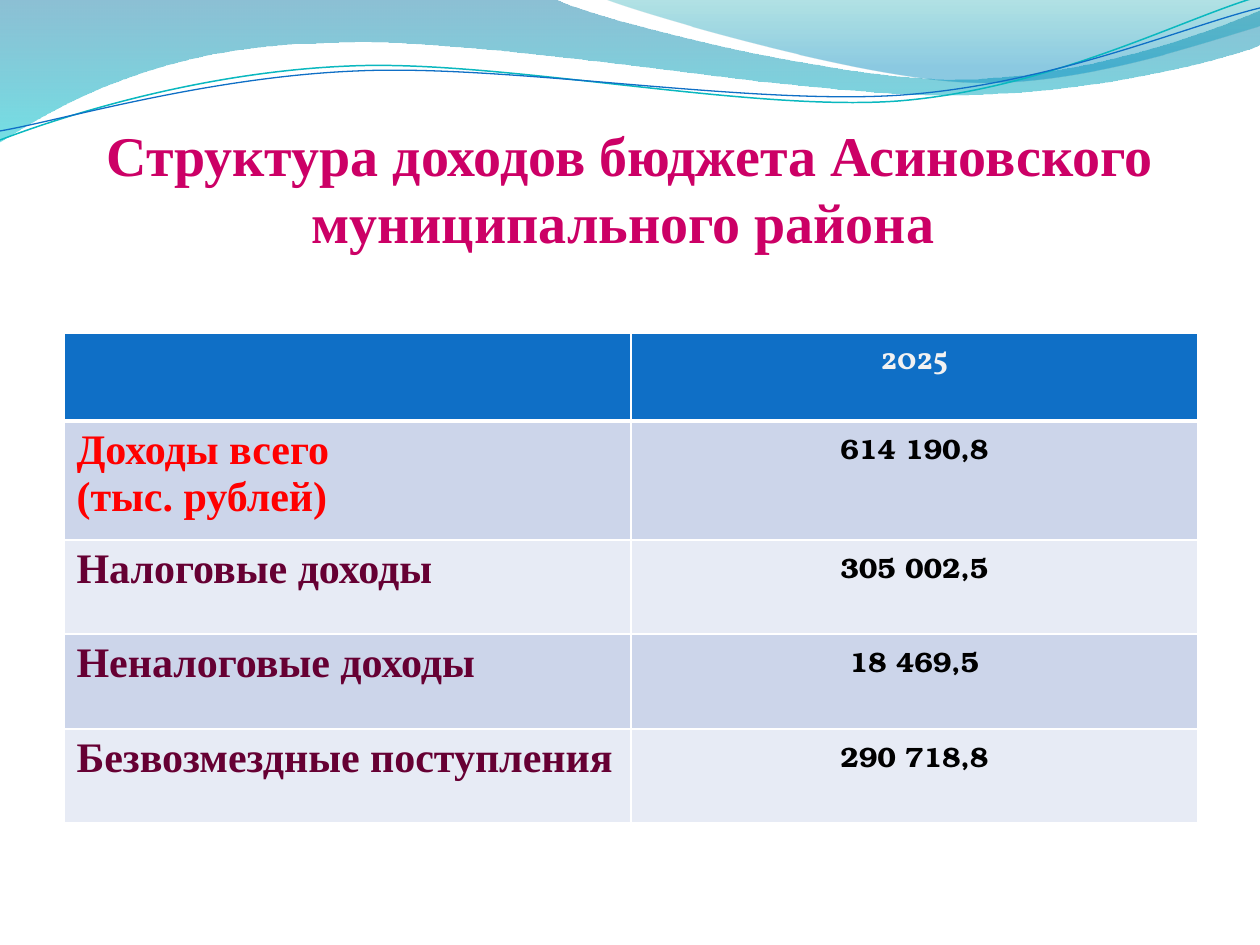
from dataclasses import dataclass
from typing import NamedTuple

from lxml import etree
from pptx import Presentation
from pptx.dml.color import RGBColor
from pptx.enum.text import MSO_ANCHOR, MSO_AUTO_SIZE, PP_ALIGN
from pptx.oxml.ns import qn
from pptx.util import Pt

CENTER, LEFT = PP_ALIGN.CENTER, PP_ALIGN.LEFT
BOTTOM = MSO_ANCHOR.BOTTOM
NO_AUTOFIT = MSO_AUTO_SIZE.NONE
EMU_PER_PX = 914400 / 126

Point = tuple[int, int]


@dataclass(frozen=True)
class Theme:
    serif: str = "Times New Roman"
    year_font: str = "Vollkorn"
    value_font: str = "TeX Gyre Bonum"
    title: str = "CC0066"
    header: str = "0F6FC6"
    year: str = "F2F2F2"
    total: str = "FF0000"
    label: str = "660033"
    value: str = "000000"
    border: str = "FFFFFF"
    bands: tuple[str, str] = ("CCD5EA", "E7EBF5")
    title_size: int = 32
    label_size: int = 24
    year_size: int = 18
    value_size: int = 16


class Stop(NamedTuple):
    position: float
    color: str
    opacity: int


@dataclass(frozen=True)
class Wave:
    start: Point
    segments: tuple[tuple[Point, ...], ...]
    stops: tuple[Stop, ...] = ()
    line_color: str = ""
    line_width: float = 0


class Style(NamedTuple):
    font: str
    size: int
    color: str
    align: PP_ALIGN


class Income(NamedTuple):
    label: str
    value: str
    height: int
    color: str


THEME = Theme()
WAVES = (
    Wave((0, 0), (
        ((554, -1),),
        ((600, 21), (837, 79), (955, 79)),
        ((1081, 79), (1207, 33), (1260, 11)),
        ((1261, 45),),
        ((1239, 55), (1096, 96), (940, 95)),
        ((781, 94), (481, 35), (324, 43)),
        ((163, 45), (58, 105), (-1, 142)),
        ((0, 0),),
    ), stops=(Stop(0, "0074A1", 45), Stop(1, "00C6CF", 55))),
    Wave((604, -1), (
        ((641, 14), (859, 78), (969, 82)),
        ((1079, 87), (1211, 40), (1260, 26)),
        ((1260, 0),),
        ((604, -1),),
    ), stops=(Stop(0, "00A1A9", 30), Stop(0.8, "008BBF", 45))),
    Wave((0, 140), (
        ((60, 117), (199, 72), (349, 66)),
        ((498, 59), (747, 112), (898, 101)),
        ((1049, 89), (1182, 19), (1257, -3)),
    ), line_color="0AB8BF", line_width=0.85),
    Wave((0, 131), (
        ((59, 121), (207, 77), (357, 71)),
        ((508, 64), (752, 106), (903, 95)),
        ((1053, 84), (1186, 26), (1260, 8)),
    ), line_color="0F6FC6", line_width=0.75),
)
HEADER_HEIGHT = 88
INCOMES = (
    Income("Доходы всего\n(тыс. рублей)", "614 190,8", 119, THEME.total),
    Income("Налоговые доходы", "305 002,5", 94, THEME.label),
    Income("Неналоговые доходы", "18 469,5", 95, THEME.label),
    Income("Безвозмездные поступления", "290 718,8", 94, THEME.label),
)


def px(length: float) -> int:
    return round(length * EMU_PER_PX)


def rgb(color: str) -> RGBColor:
    return RGBColor.from_string(color)


def bend_segments(shape, wave: Wave) -> None:
    lines = list(shape.element.iter(qn("a:lnTo")))
    for line, points in zip(lines, wave.segments):
        if len(points) == 1:
            continue
        curve = etree.Element(qn("a:cubicBezTo"))
        for x, y in points:
            position = {"x": str(px(x) - shape.left), "y": str(px(y) - shape.top)}
            etree.SubElement(curve, qn("a:pt"), position)
        line.getparent().replace(line, curve)


def draw_wave(slide, wave: Wave) -> None:
    builder = slide.shapes.build_freeform(px(wave.start[0]), px(wave.start[1]), 1.0)
    anchors = [(px(points[-1][0]), px(points[-1][1])) for points in wave.segments]
    builder.add_line_segments(anchors, close=bool(wave.stops))
    shape = builder.convert_to_shape()
    bend_segments(shape, wave)
    shape.shadow.inherit = False
    if not wave.stops:
        shape.fill.background()
        shape.line.color.rgb = rgb(wave.line_color)
        shape.line.width = Pt(wave.line_width)
        return
    shape.line.fill.background()
    shape.fill.gradient()
    shape.fill.gradient_angle = 270
    for target, stop in zip(shape.fill.gradient_stops, wave.stops):
        target.position = stop.position
        target.color.rgb = rgb(stop.color)
    for color, stop in zip(shape.element.iter(qn("a:srgbClr")), wave.stops):
        etree.SubElement(color, qn("a:alpha"), val=str(stop.opacity * 1000))


def write(frame, text: str, style: Style) -> None:
    frame.text = text
    for para in frame.paragraphs:
        para.alignment = style.align
        for span in para.runs:
            span.font.name = style.font
            span.font.size = Pt(style.size)
            span.font.bold = True
            span.font.color.rgb = rgb(style.color)


def set_borders(cell, top: int, bottom: int) -> None:
    properties = cell._tc.get_or_add_tcPr()
    for index, (side, width) in enumerate(zip("LRTB", (1, 1, top, bottom))):
        line = etree.Element(qn(f"a:ln{side}"), w=str(Pt(width)))
        fill = etree.SubElement(line, qn("a:solidFill"))
        etree.SubElement(fill, qn("a:srgbClr"), val=THEME.border)
        properties.insert(index, line)


def draw_title(slide, text: str) -> None:
    title = slide.shapes.title
    title.left, title.top, title.width, title.height = map(px, (63, 97, 1134, 158))
    frame = title.text_frame
    frame.margin_left = frame.margin_right = frame.margin_bottom = 0
    frame.margin_top = px(6)
    frame.vertical_anchor = BOTTOM
    frame.word_wrap = True
    frame.auto_size = NO_AUTOFIT
    write(frame, text, Style(THEME.serif, THEME.title_size, THEME.title, CENTER))
    title.element.getparent().append(title.element)


def draw_table(slide) -> None:
    heights = [HEADER_HEIGHT, *(income.height for income in INCOMES)]
    table = slide.shapes.add_table(
        len(heights), 2, px(64), px(333), px(1134), px(sum(heights))
    ).table
    for row, height in zip(table.rows, heights):
        row.height = px(height)
    year_style = Style(THEME.year_font, THEME.year_size, THEME.year, CENTER)
    value_style = Style(THEME.value_font, THEME.value_size, THEME.value, CENTER)
    write(table.cell(0, 1).text_frame, "2025", year_style)
    for index, income in enumerate(INCOMES, start=1):
        label_style = Style(THEME.serif, THEME.label_size, income.color, LEFT)
        write(table.cell(index, 0).text_frame, income.label, label_style)
        write(table.cell(index, 1).text_frame, income.value, value_style)
    for index, row in enumerate(table.rows):
        for cell in row.cells:
            cell.fill.solid()
            cell.fill.fore_color.rgb = rgb(THEME.bands[(index - 1) % 2] if index else THEME.header)
            set_borders(cell, top=3 if index == 1 else 1, bottom=1 if index else 3)


def main() -> None:
    deck = Presentation()
    deck.slide_width, deck.slide_height = px(1260), px(945)
    slide = deck.slides.add_slide(deck.slide_layouts.get_by_name("Title Only"))
    for wave in WAVES:
        draw_wave(slide, wave)
    draw_title(slide, "Структура доходов бюджета Асиновского муниципального района ")
    draw_table(slide)
    deck.save("out.pptx")


if __name__ == "__main__":
    main()
